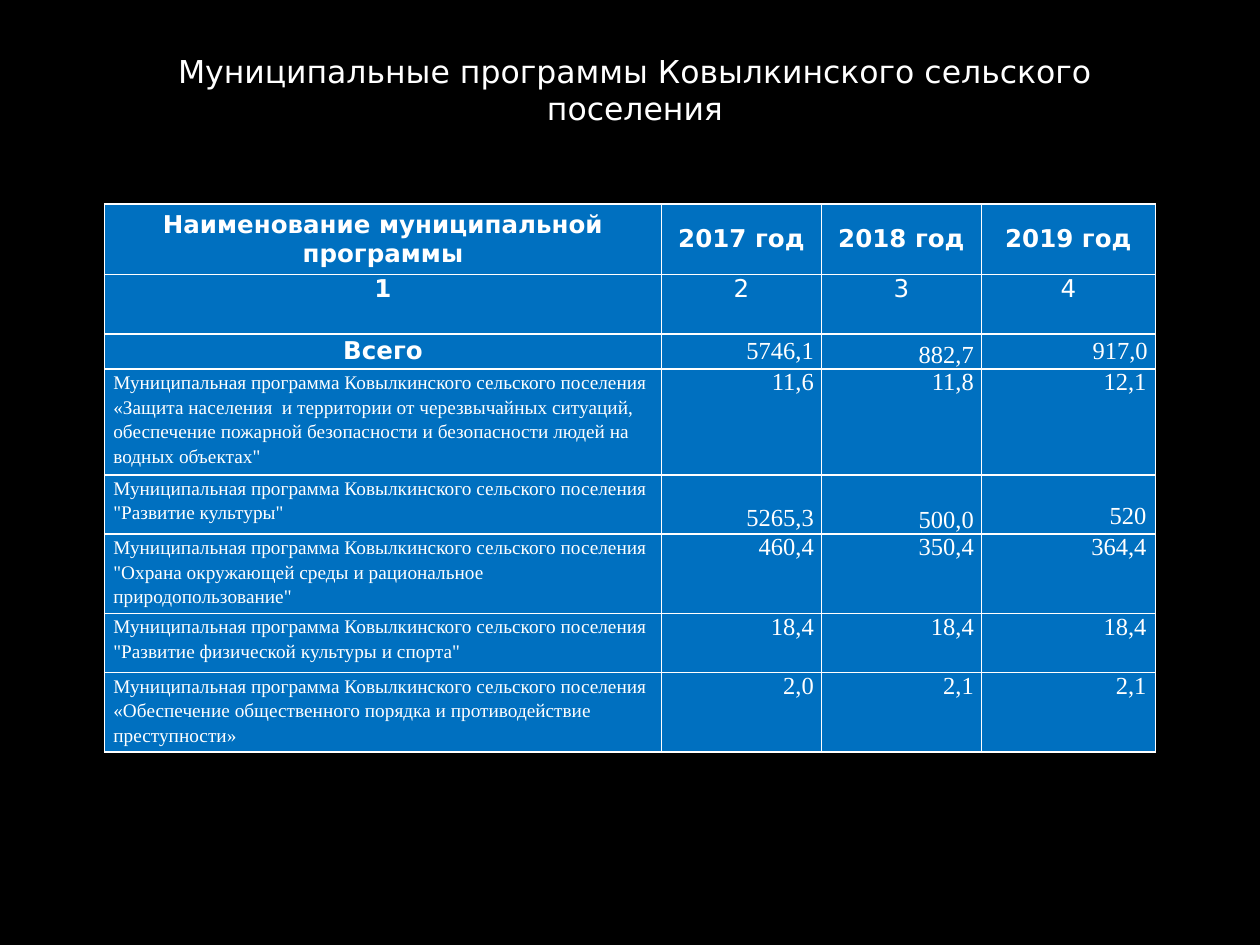
from lxml import etree
from pptx import Presentation
from pptx.dml.color import RGBColor
from pptx.enum.text import MSO_ANCHOR, PP_ALIGN
from pptx.oxml.ns import qn
from pptx.util import Inches, Pt

TOP, MIDDLE, BOTTOM = MSO_ANCHOR.TOP, MSO_ANCHOR.MIDDLE, MSO_ANCHOR.BOTTOM
LEFT, CENTER, RIGHT = PP_ALIGN.LEFT, PP_ALIGN.CENTER, PP_ALIGN.RIGHT
SANS, SERIF = "DejaVu Sans", "Times New Roman"
WHITE, BLUE, BLACK = "FFFFFF", "0070C0", "000000"
PROGRAM = "Муниципальная программа Ковылкинского сельского поселения "


def color(value):
    return RGBColor.from_string(value)


def write(frame, text, size, face, align, bold=False):
    frame.word_wrap = True
    paragraph = frame.paragraphs[0]
    paragraph.text = text
    paragraph.alignment = align
    font = paragraph.font
    font.size, font.name, font.bold = Pt(size), face, bold
    font.color.rgb = color(WHITE)
    return paragraph


deck = Presentation()
deck.slide_width, deck.slide_height = Inches(10), Inches(7.5)
slide = deck.slides.add_slide(deck.slide_layouts[6])
slide.background.fill.solid()
slide.background.fill.fore_color.rgb = color(BLACK)

column_widths = [4.42, 1.27, 1.27, 1.38]
row_heights = [0.56, 0.47, 0.28, 0.84, 0.47, 0.63, 0.47, 0.63]
budget = [
    ["Наименование муниципальной программы", "2017 год", "2018 год", "2019 год"],
    ["1", "2", "3", "4"],
    ["Всего", "5746,1", "882,7", "917,0"],
    [PROGRAM + "«Защита населения  и территории от черезвычайных ситуаций, "
     "обеспечение пожарной безопасности и безопасности людей на водных объектах\"",
     "11,6", "11,8", "12,1"],
    [PROGRAM + "\"Развитие культуры\"", "5265,3", "500,0", "520"],
    [PROGRAM + "\"Охрана окружающей среды и рациональное природопользование\"",
     "460,4", "350,4", "364,4"],
    [PROGRAM + "\"Развитие физической культуры и спорта\"", "18,4", "18,4", "18,4"],
    [PROGRAM + "«Обеспечение общественного порядка и противодействие преступности»",
     "2,0", "2,1", "2,1"],
]
HEADING, NUMBERS, TOTAL, CULTURE = 0, 1, 2, 4
anchors = {HEADING: [MIDDLE] * 4,
           TOTAL: [MIDDLE, MIDDLE, BOTTOM, MIDDLE],
           CULTURE: [TOP, MIDDLE, BOTTOM, TOP]}
lowered = {(CULTURE, 1), (CULTURE, 3)}

programs = slide.shapes.add_table(
    len(budget), len(column_widths), Inches(0.83), Inches(1.62),
    Inches(sum(column_widths)), Inches(sum(row_heights))).table
for column, width in zip(programs.columns, column_widths):
    column.width = Inches(width)
for row, height in zip(programs.rows, row_heights):
    row.height = Inches(height)

for r, entries in enumerate(budget):
    for c, entry in enumerate(entries):
        cell = programs.cell(r, c)
        is_program = r > TOTAL and c == 0
        is_amount = r >= TOTAL and c > 0
        side = 0.07 if r > TOTAL and c in (0, 3) else 0.06
        cell.margin_left = cell.margin_right = Inches(side)
        cell.margin_top = Inches(0.22 if (r, c) in lowered else 0)
        cell.margin_bottom = 0
        cell.vertical_anchor = anchors.get(r, [TOP] * 4)[c]
        line = write(cell.text_frame, entry,
                     11 if is_program else 14,
                     SERIF if is_program or is_amount else SANS,
                     LEFT if is_program else RIGHT if is_amount else CENTER,
                     r == HEADING or (c == 0 and r <= TOTAL))
        if is_program:
            line.line_spacing = 1.15
        properties = cell._tc.get_or_add_tcPr()
        for edge in ("a:lnL", "a:lnR", "a:lnT", "a:lnB"):
            border = etree.SubElement(properties, qn(edge), w=str(Pt(1)))
            paint = etree.SubElement(border, qn("a:solidFill"))
            etree.SubElement(paint, qn("a:srgbClr"), val=WHITE)
        cell.fill.solid()
        cell.fill.fore_color.rgb = color(BLUE)

title = slide.shapes.add_textbox(Inches(0.67), Inches(0.36), Inches(8.74), Inches(0.71))
write(title.text_frame, "Муниципальные программы Ковылкинского сельского поселения",
      18, SANS, CENTER)

deck.save("out.pptx")
